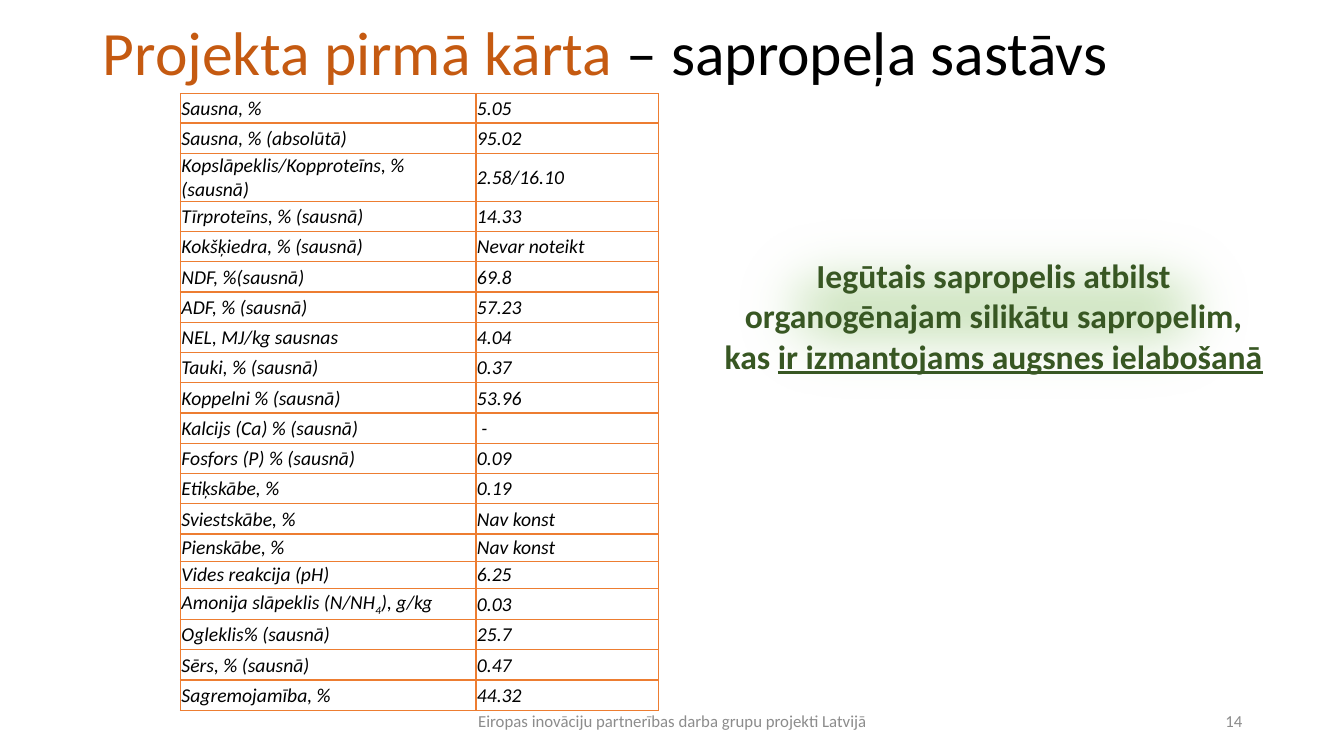
import pptx
import pptx.util
import pptx.dml.color
import pptx.enum.shapes
import pptx.enum.text
import pptx.oxml
import pptx.oxml.ns

Inches, Pt = pptx.util.Inches, pptx.util.Pt
RGBColor = pptx.dml.color.RGBColor
ALIGN = pptx.enum.text.PP_ALIGN
MIDDLE = pptx.enum.text.MSO_ANCHOR.MIDDLE

FONT = "Calibri"
BLACK = RGBColor(0x00, 0x00, 0x00)
RUST = RGBColor(0xC5, 0x5A, 0x11)
ORANGE = RGBColor(0xED, 0x7D, 0x31)
GRAY = RGBColor(0x8C, 0x8C, 0x8C)
PALE_GREEN = RGBColor(0xC5, 0xE0, 0xB4)
DARK_GREEN = RGBColor(0x38, 0x57, 0x23)

TITLE = [("Projekta pirmā kārta ", RUST), ("– sapropeļa sastāvs", BLACK)]
FOOTER = "Eiropas inovāciju partnerības darba grupu projekti Latvijā"
PAGE = "14"
CONCLUSION = [
    ["Iegūtais sapropelis atbilst"],
    ["organogēnajam silikātu sapropelim,"],
    ["kas ", "ir izmantojams augsnes ielabošanā"],
]
# The label is a tuple of runs where its second run is a subscript.
COMPOSITION = [
    ("Sausna, %", "5.05"),
    ("Sausna, % (absolūtā)", "95.02"),
    ("Kopslāpeklis/Kopproteīns, % (sausnā)", "2.58/16.10"),
    ("Tīrproteīns, % (sausnā)", "14.33"),
    ("Kokšķiedra, % (sausnā)", "Nevar noteikt"),
    ("NDF, %(sausnā)", "69.8"),
    ("ADF, % (sausnā)", "57.23"),
    ("NEL, MJ/kg sausnas", "4.04"),
    ("Tauki, % (sausnā)", "0.37"),
    ("Koppelni % (sausnā)", "53.96"),
    ("Kalcijs (Ca) % (sausnā)", " -"),
    ("Fosfors (P) % (sausnā)", "0.09"),
    ("Etiķskābe, %", "0.19"),
    ("Sviestskābe, %", "Nav konst"),
    ("Pienskābe, %", "Nav konst"),
    ("Vides reakcija (pH)", "6.25"),
    (("Amonija slāpeklis (N/NH", "4", "), g/kg"), "0.03"),
    ("Ogleklis% (sausnā)", "25.7"),
    ("Sērs, % (sausnā)", "0.47"),
    ("Sagremojamība, %", "44.32"),
]
COL_WIDTHS = (2.93, 1.81)
ROW_HEIGHT = 0.3
SPECIAL_HEIGHTS = {0: 0.29, 14: 0.27, 15: 0.27, 16: 0.31}


def add_run(p, text, size, color, bold=None, italic=None):
    r = p.add_run()
    r.text = text
    r.font.name, r.font.size = FONT, Pt(size)
    r.font.bold, r.font.italic = bold, italic
    r.font.color.rgb = color
    return r


def add_footer(s, left, width, text, align):
    tf = s.shapes.add_textbox(Inches(left), Inches(6.95), Inches(width), Inches(0.4)).text_frame
    tf.word_wrap = True
    tf.vertical_anchor = MIDDLE
    p = tf.paragraphs[0]
    p.alignment = align
    add_run(p, text, 12, GRAY)


def add_borders(cell):
    """Put a 1 pt line on all four sides; lines go before the fill."""
    tc_pr = cell._tc.get_or_add_tcPr()
    for i, side in enumerate(("lnL", "lnR", "lnT", "lnB")):
        tc_pr.insert(i, pptx.oxml.parse_xml(
            f'<a:{side} {pptx.oxml.ns.nsdecls("a")} w="{Pt(1)}"><a:solidFill>'
            f'<a:srgbClr val="{ORANGE}"/></a:solidFill></a:{side}>'))


def fill_cell(cell, content):
    cell.fill.background()
    cell.vertical_anchor = MIDDLE
    cell.margin_left = cell.margin_right = cell.margin_top = Inches(0.01)
    cell.margin_bottom = 0
    runs = (content,) if isinstance(content, str) else content
    for i, text in enumerate(runs):
        r = add_run(cell.text_frame.paragraphs[0], text, 14, BLACK, italic=True)
        if i == 1:
            r.font._element.set("baseline", "-25000")
    add_borders(cell)


def add_composition(s):
    heights = [SPECIAL_HEIGHTS.get(i, ROW_HEIGHT) for i in range(len(COMPOSITION))]
    table = s.shapes.add_table(len(heights), len(COL_WIDTHS), Inches(1.79), Inches(0.93),
                               Inches(sum(COL_WIDTHS)), Inches(sum(heights))).table
    table.first_row = table.horz_banding = False
    for column, width in zip(table.columns, COL_WIDTHS):
        column.width = Inches(width)
    for row, height, contents in zip(table.rows, heights, COMPOSITION):
        row.height = Inches(height)
        for cell, content in zip(row.cells, contents):
            fill_cell(cell, content)


def add_conclusion(s):
    sp = s.shapes.add_shape(pptx.enum.shapes.MSO_SHAPE.RECTANGLE,
                            Inches(7.06), Inches(1.93), Inches(5.59), Inches(2.26))
    sp.fill.solid()
    sp.fill.fore_color.rgb = PALE_GREEN
    sp.line.fill.background()
    sp.shadow.inherit = False
    effects = sp._element.spPr.find(pptx.oxml.ns.qn("a:effectLst"))
    effects.append(pptx.oxml.parse_xml(
        f'<a:softEdge {pptx.oxml.ns.nsdecls("a")} rad="{Pt(50)}"/>'))
    tf = sp.text_frame
    tf.word_wrap = False
    tf.vertical_anchor = pptx.enum.text.MSO_ANCHOR.TOP
    tf.margin_top = Inches(0.6)
    for i, runs in enumerate(CONCLUSION):
        p = tf.paragraphs[0] if i == 0 else tf.add_paragraph()
        p.alignment = ALIGN.CENTER
        for j, text in enumerate(runs):
            r = add_run(p, text, 24, DARK_GREEN, bold=True)
            if j == 1:
                r.font.underline = True


def main():
    prs = pptx.Presentation()
    prs.slide_width, prs.slide_height = Inches(13.33), Inches(7.5)
    s = prs.slides.add_slide(prs.slide_layouts[5])

    title = s.shapes.title
    title.left, title.top = Inches(0.92), 0
    title.width, title.height = Inches(11.5), Inches(1.11)
    title.text_frame.vertical_anchor = MIDDLE
    p = title.text_frame.paragraphs[0]
    p.alignment, p.line_spacing = ALIGN.LEFT, 0.9
    for text, color in TITLE:
        add_run(p, text, 44, color)

    add_footer(s, 4.42, 4.5, FOOTER, ALIGN.CENTER)
    add_composition(s)
    add_conclusion(s)
    add_footer(s, 9.42, 3, PAGE, ALIGN.RIGHT)
    prs.save("out.pptx")


if __name__ == "__main__":
    main()
